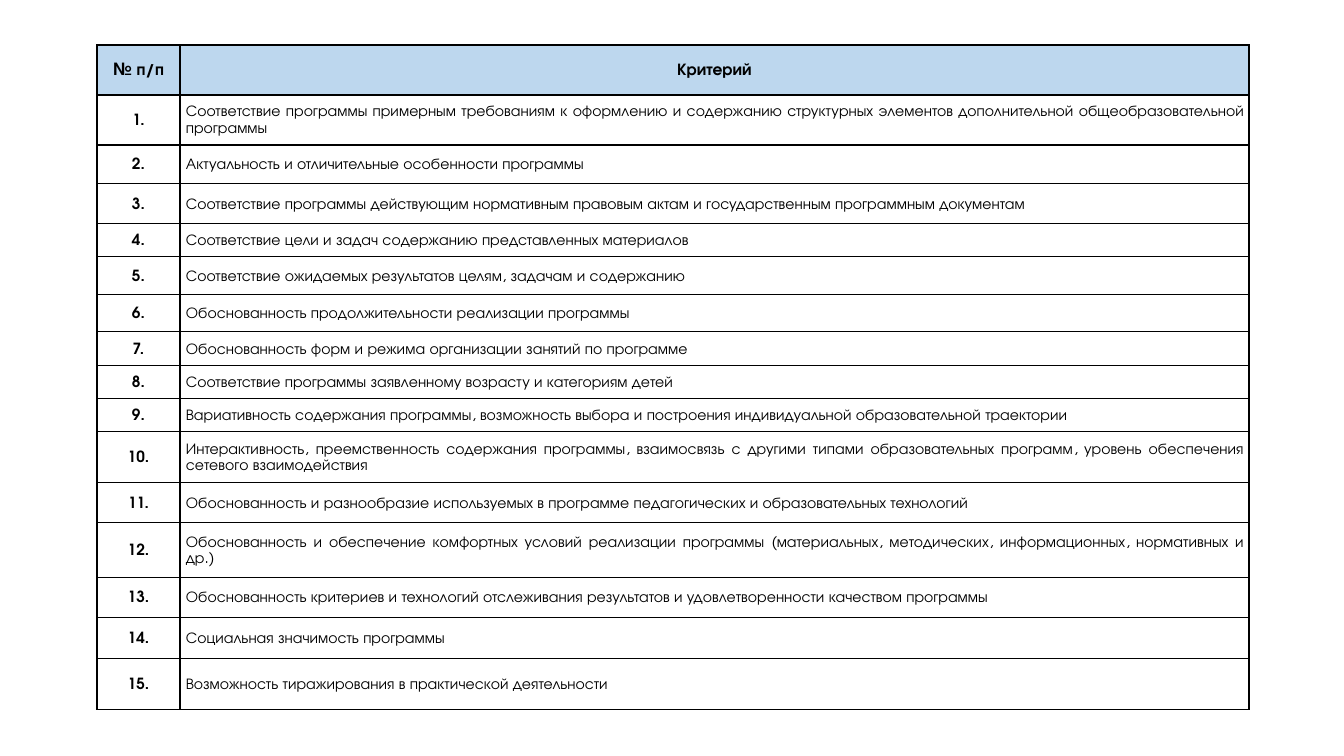
from lxml import etree
from pptx import Presentation, util as u
from pptx.dml.color import RGBColor
from pptx.enum import text
from pptx.oxml import ns

PX = 914400 / 100.8
FONT = "TeX Gyre Adventor"
BLACK = RGBColor(0x00, 0x00, 0x00)
HEADER_BLUE = RGBColor(0xBD, 0xD7, 0xEE)

HEADINGS = ("№ п/п", "Критерий")
HEADER_HEIGHT = 50
COLUMN_WIDTHS = (83, 1069)

# Row height and wording of each criterion
CRITERIA = [
    (50, "Соответствие программы примерным требованиям к оформлению и содержанию "
         "структурных элементов дополнительной общеобразовательной программы"),
    (39, "Актуальность и отличительные особенности программы"),
    (40, "Соответствие программы действующим нормативным правовым актам и "
         "государственным программным документам"),
    (33, "Соответствие цели и задач содержанию представленных материалов"),
    (38, "Соответствие ожидаемых результатов целям, задачам и содержанию"),
    (37, "Обоснованность продолжительности реализации программы"),
    (34, "Обоснованность форм и режима организации занятий по программе"),
    (33, "Соответствие программы заявленному возрасту и категориям детей"),
    (33, "Вариативность содержания программы, возможность выбора и построения "
         "индивидуальной образовательной траектории"),
    (51, "Интерактивность, преемственность содержания программы, взаимосвязь с другими "
         "типами образовательных программ, уровень обеспечения сетевого взаимодействия"),
    (40, "Обоснованность и разнообразие используемых в программе педагогических и "
         "образовательных технологий"),
    (55, "Обоснованность и обеспечение комфортных условий реализации программы "
         "(материальных, методических, информационных, нормативных и др.)"),
    (40, "Обоснованность критериев и технологий отслеживания результатов и "
         "удовлетворенности качеством программы"),
    (41, "Социальная значимость программы"),
    (51, "Возможность тиражирования в практической деятельности"),
]


def px(length):
    return u.Emu(round(length * PX))


def add_borders(cell):
    properties = cell._tc.get_or_add_tcPr()
    for side in ("lnL", "lnR", "lnT", "lnB"):
        line = etree.SubElement(properties, ns.qn(f"a:{side}"), w=str(u.Pt(1)))
        fill = etree.SubElement(line, ns.qn("a:solidFill"))
        etree.SubElement(fill, ns.qn("a:srgbClr"), val=str(BLACK))


def fill_cell(cell, wording, size, bold=True, justified=False, color=None):
    add_borders(cell)
    if color is None:
        cell.fill.background()
    else:
        cell.fill.solid()
        cell.fill.fore_color.rgb = color
    cell.margin_left = cell.margin_right = px(4)
    cell.margin_top = cell.margin_bottom = 0
    cell.vertical_anchor = text.MSO_ANCHOR.MIDDLE

    para = cell.text_frame.paragraphs[0]
    para.text = wording
    para.line_spacing = 1.15
    para.alignment = text.PP_ALIGN.CENTER
    if justified:
        para.alignment = text.PP_ALIGN.JUSTIFY
        para._p.get_or_add_pPr().set("marL", str(px(2)))
    font = para.runs[0].font
    font.name, font.size, font.bold = FONT, u.Pt(size), bold
    font.color.rgb = BLACK


def add_criteria_table(page, left, top, width, height):
    frame = page.shapes.add_table(len(CRITERIA) + 1, len(HEADINGS),
                                  px(left), px(top), px(width), px(height))
    table = frame.table
    for column, column_width in zip(table.columns, COLUMN_WIDTHS):
        column.width = px(column_width)

    # Header row
    table.rows[0].height = px(HEADER_HEIGHT)
    for index, heading in enumerate(HEADINGS):
        fill_cell(table.cell(0, index), heading, 12, color=HEADER_BLUE)

    # Numbered criteria
    for number, (row_height, criterion) in enumerate(CRITERIA, start=1):
        table.rows[number].height = px(row_height)
        fill_cell(table.cell(number, 0), f"{number}.", 11)
        fill_cell(table.cell(number, 1), criterion, 11, bold=False, justified=True)


def main():
    deck = Presentation()
    deck.slide_width, deck.slide_height = px(1344), px(756)
    page = deck.slides.add_slide(deck.slide_layouts[6])
    table_height = HEADER_HEIGHT + sum(row_height for row_height, _ in CRITERIA)
    add_criteria_table(page, 97, 45, sum(COLUMN_WIDTHS), table_height)
    deck.save("out.pptx")


if __name__ == "__main__":
    main()
